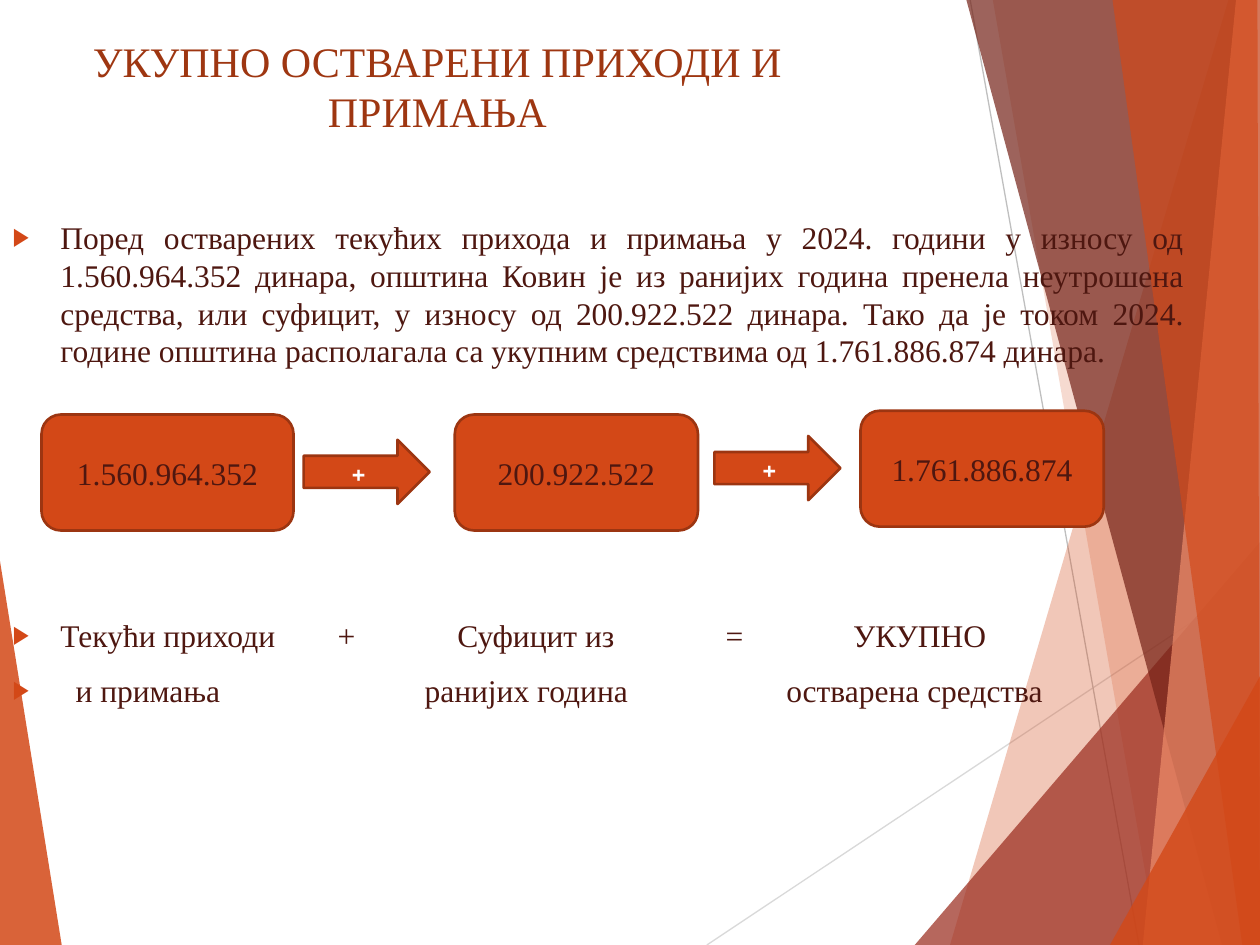
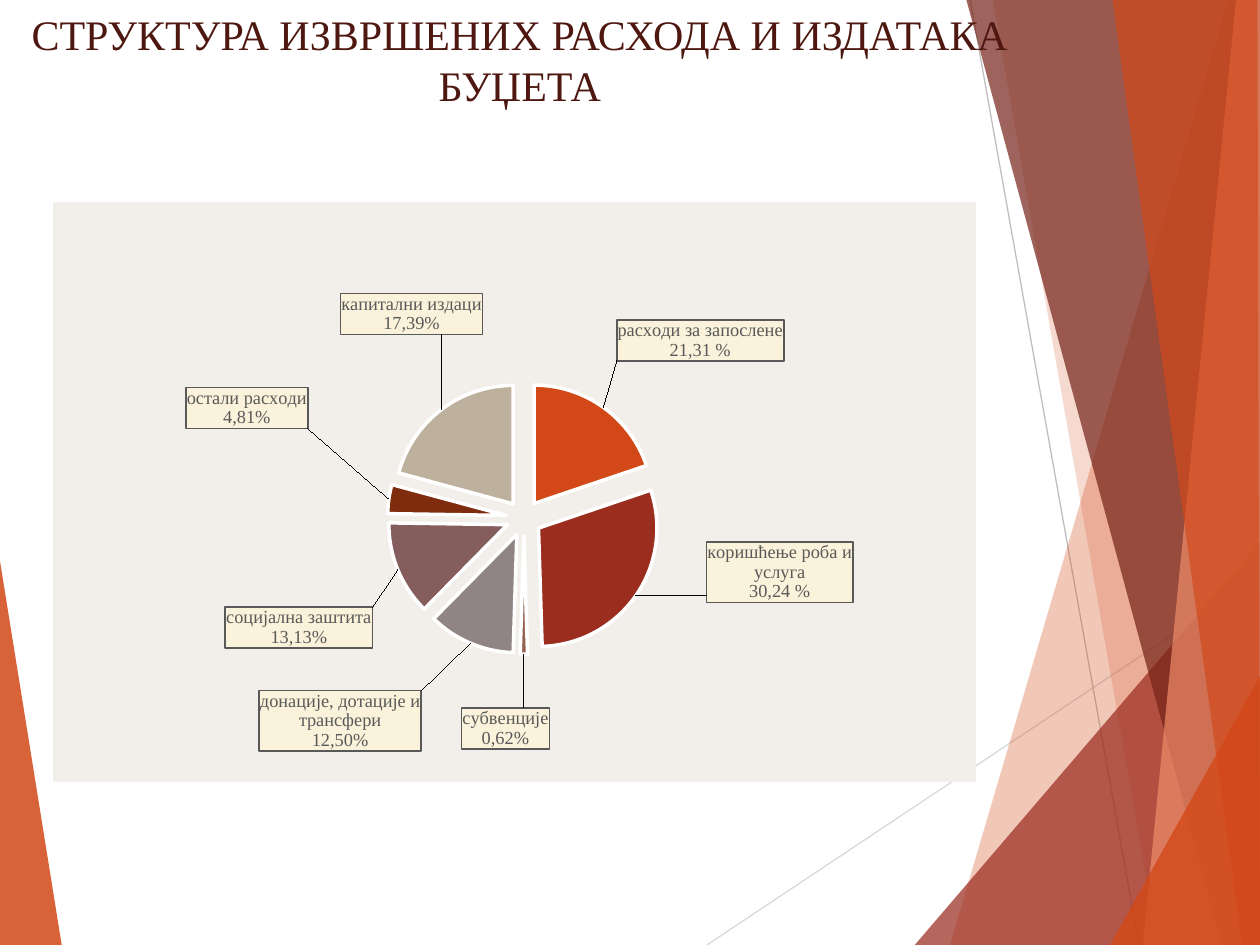
from lxml import etree
from pptx import Presentation
from pptx.chart.data import CategoryChartData
from pptx.dml.color import RGBColor
from pptx.enum.chart import XL_CHART_TYPE, XL_LABEL_POSITION
from pptx.enum.shapes import MSO_CONNECTOR, MSO_SHAPE
from pptx.enum.text import MSO_ANCHOR, MSO_AUTO_SIZE, PP_ALIGN
from pptx.oxml import parse_xml
from pptx.oxml.ns import nsdecls, qn
from pptx.util import Inches, Pt

LINE = MSO_CONNECTOR.STRAIGHT
BOX, ARROW = MSO_SHAPE.ROUNDED_RECTANGLE, MSO_SHAPE.RIGHT_ARROW
PIE, OUTSIDE = XL_CHART_TYPE.PIE, XL_LABEL_POSITION.OUTSIDE_END
TOP, NO_FIT = MSO_ANCHOR.TOP, MSO_AUTO_SIZE.NONE
LEFT, CENTER, JUSTIFY = PP_ALIGN.LEFT, PP_ALIGN.CENTER, PP_ALIGN.JUSTIFY

ORANGE = RGBColor(0xD3, 0x48, 0x17)
RUST = RGBColor(0x9E, 0x36, 0x11)
EDGE = RGBColor(0x9C, 0x35, 0x11)
RED = RGBColor(0x9B, 0x2D, 0x1F)
MAROON = RGBColor(0x74, 0x22, 0x17)
CORAL = RGBColor(0xEF, 0x8C, 0x6A)
DARK = RGBColor(0x4E, 0x17, 0x10)
GREY = RGBColor(0x59, 0x59, 0x59)
SILVER = RGBColor(0xBF, 0xBF, 0xBF)
PALE = RGBColor(0xD9, 0xD9, 0xD9)
CREAM = RGBColor(0xFA, 0xF2, 0xDA)
SAND = RGBColor(0xF2, 0xEF, 0xEA)
TAN = RGBColor(0xBD, 0xB0, 0x9C)
MAUVE = RGBColor(0x91, 0x84, 0x85)
PLUM = RGBColor(0x85, 0x5D, 0x5D)
BROWN = RGBColor(0x7F, 0x2B, 0x0E)
UMBER = RGBColor(0x95, 0x62, 0x51)
WHITE = RGBColor(0xFF, 0xFF, 0xFF)
BLACK = RGBColor(0, 0, 0)
SERIF, SANS = "Times New Roman", "Cabin"


def style(frame, size, color, font=SERIF, align=CENTER):
    """Format every paragraph and run of a text frame."""
    for para in frame.paragraphs:
        para.alignment = align
        for run in para.runs:
            for key, value in {"size": Pt(size), "name": font}.items():
                setattr(run.font, key, value)
            run.font.color.rgb = color


def chart_fill(fill, line, width):
    """Make the fill and border element of a chart part."""
    return parse_xml(
        f'<c:spPr {nsdecls("c", "a")}><a:solidFill><a:srgbClr val="{fill}"/></a:solidFill>'
        f'<a:ln w="{Pt(width)}"><a:solidFill><a:srgbClr val="{line}"/></a:solidFill></a:ln></c:spPr>')


prs = Presentation()
prs.slide_width, prs.slide_height = Inches(10), Inches(7.5)
income = prs.slides.add_slide(prs.slide_layouts[1])
spend = prs.slides.add_slide(prs.slide_layouts[5])

# Decor: drawn once, then moved to the master
decor = []
for x1, y1, x2, y2, color in [(5.61, 7.5, 10.01, 4.57, PALE), (7.7, 0, 9.04, 7.5, SILVER)]:
    line = income.shapes.add_connector(LINE, Inches(x1), Inches(y1), Inches(x2), Inches(y2))
    line.line.color.rgb = color
    line.line.width = Pt(0.75)
    etree.SubElement(line.element.spPr, qn("a:effectLst"))
    decor.append(line)

BANDS = [
    (ORANGE, 85, [(-0.01, 4.39), (0.49, 7.5), (-0.01, 7.5)]),
    (ORANGE, 30, [(9.75, 0), (7.54, 7.5), (10.01, 7.5), (10.01, 0)]),
    (ORANGE, 20, [(7.88, 0), (9.19, 7.5), (10.01, 7.5), (10.01, 0)]),
    (RED, 72, [(7.26, 7.5), (10.01, 4.29), (10.01, 7.5)]),
    (MAROON, 70, [(7.67, 0), (9.7, 7.5), (10.01, 7.5), (10.01, 0)]),
    (CORAL, 70, [(9.81, 0), (9.07, 7.5), (10.01, 7.5), (10.01, 0)]),
    (ORANGE, 65, [(8.83, 0), (9.86, 7.5), (10, 7.5), (9.98, 0)]),
    (ORANGE, 80, [(8.81, 7.5), (10.01, 5.35), (10.01, 7.5)]),
]
for color, alpha, points in BANDS:
    spots = [(Inches(x), Inches(y)) for x, y in points]
    pen = income.shapes.build_freeform(*spots[0])
    pen.add_line_segments(spots[1:], close=True)
    band = pen.convert_to_shape()
    band.shadow.inherit = False
    band.fill.solid()
    band.fill.fore_color.rgb = color
    band.line.fill.background()
    tone = band.element.spPr.find(qn("a:solidFill"))[0]
    etree.SubElement(tone, qn("a:alpha"), val=str(alpha * 1000))
    decor.append(band)

tree = prs.slide_master.element.cSld.spTree
for number, item in enumerate(decor, 100):
    item.element.xpath(".//p:cNvPr")[0].set("id", str(number))
    tree.append(item.element)

# Titles
for slide, text, color, top, width, height in [
    (income, "УКУПНО ОСТВАРЕНИ ПРИХОДИ И ПРИМАЊА", RUST, 0.23, 6.94, 1.44),
    (spend, "СТРУКТУРА ИЗВРШЕНИХ РАСХОДА И ИЗДАТАКА БУЏЕТА", DARK, 0.02, 8.25, 1.59),
]:
    title = slide.shapes.title
    title.left, title.top = Inches(0), Inches(top)
    title.width, title.height = Inches(width), Inches(height)
    frame = title.text_frame
    frame.text = text
    frame.vertical_anchor, frame.auto_size = TOP, NO_FIT
    style(frame, 24, color)

# Slide 1: list
body = income.placeholders[1]
body.left, body.top = Inches(0), Inches(1.68)
body.width, body.height = Inches(9.5), Inches(5.13)
frame = body.text_frame
frame.vertical_anchor, frame.auto_size = TOP, NO_FIT
ROWS = [
    ("Поред остварених текућих прихода и примања у 2024. години у износу од "
     "1.560.964.352 динара, општина Ковин је из ранијих година пренела неутрошена "
     "средства, или суфицит, у износу од 200.922.522 динара. Тако да је током 2024. "
     "године општина располагала са укупним средствима од 1.761.886.874 динара.", 0, []),
    ("\tТекући приходи\t+\tСуфицит из\t=\tУКУПНО", 141, [0.38, 2.58, 3.53, 5.66, 6.67]),
    ("\tи примања\tранијих година\tостварена средства", 10, [0.5, 3.27, 6.14]),
]
frame.text = "\n".join(row[0] for row in ROWS)
style(frame, 18, DARK, align=LEFT)
frame.paragraphs[0].alignment = JUSTIFY
for para, (text, before, stops) in zip(frame.paragraphs, ROWS):
    para.space_before = Pt(before)
    props = para._p.get_or_add_pPr()
    indent = 0 if stops else Inches(0.38)
    props.set("marL", str(indent))
    props.set("indent", str(-indent))
    tint = etree.SubElement(props, qn("a:buClr"))
    etree.SubElement(tint, qn("a:srgbClr"), val=str(ORANGE))
    etree.SubElement(props, qn("a:buSzPct"), val="80000")
    etree.SubElement(props, qn("a:buChar"), char="▶")
    if stops:
        tabs = etree.SubElement(props, qn("a:tabLst"))
        for stop in stops:
            etree.SubElement(tabs, qn("a:tab"), pos=str(Inches(stop)), algn="l")

# Slide 1: sum in boxes and arrows
for kind, text, left, top, width in [
    (BOX, "1.560.964.352", 0.33, 3.29, 2),
    (BOX, "200.922.522", 3.61, 3.29, 1.93),
    (ARROW, "+", 2.41, 3.49, 1),
    (BOX, "1.761.886.874", 6.83, 3.26, 1.93),
    (ARROW, "+", 5.67, 3.46, 1),
]:
    height, color, font = (0.92, DARK, SERIF) if kind == BOX else (0.51, WHITE, SANS)
    shape = income.shapes.add_shape(kind, Inches(left), Inches(top), Inches(width), Inches(height))
    shape.shadow.inherit = False
    shape.fill.solid()
    shape.fill.fore_color.rgb = ORANGE
    shape.line.color.rgb = EDGE
    shape.line.width = Pt(1.5)
    shape.text_frame.text = text
    style(shape.text_frame, 18, color, font)

# Slide 2: pie; name, value, colour, label share, label shift
SLICES = [
    ("расходи за запослене", 20, ORANGE, "21,31 %", 0.01, -0.07),
    ("коришћење роба и услуга", 30, RED, "30,24 %", 0.07, -0.1),
    ("", None, TAN, "", 0, 0),
    ("субвенције", 1, UMBER, "0,62%", -0.02, 0.08),
    ("донације, дотације и трансфери", 12, MAUVE, "12,50%", -0.05, 0.07),
    ("социјална заштита", 13, PLUM, "13,13%", -0.02, 0.06),
    ("остали расходи", 4, BROWN, "4,81%", -0.08, -0.12),
    ("", None, MAROON, "", 0, 0),
    ("капитални издаци", 21, TAN, "17,39%", 0.05, -0.12),
]
data = CategoryChartData(number_format="#,##0")
data.categories = [part[0] for part in SLICES]
data.add_series("Series 1", [part[1] for part in SLICES])
chart = spend.shapes.add_chart(
    PIE, Inches(0.42), Inches(1.6), Inches(7.33), Inches(4.61), data).chart
chart.has_legend = chart.has_title = False
chart.font.size, chart.font.name = Pt(10), SANS
chart.font.color.rgb = BLACK
plot = chart.plots[0]
plot.vary_by_categories = True
series = plot.series[0]
series.data_labels.show_value = False

for index, (name, value, color, share, dx, dy) in enumerate(SLICES):
    if value is None:
        continue
    point = series.points[index]
    point.format.fill.solid()
    point.format.fill.fore_color.rgb = color
    point.format.line.color.rgb = WHITE
    point.format.line.width = Pt(2)
    label = point.data_label
    label.text_frame.text = f"{name}\n{share}"
    style(label.text_frame, 10.5, GREY)
    label.position = OUTSIDE
    node = series._element.xpath(f'c:dLbls/c:dLbl[c:idx/@val="{index}"]')[0]
    node.find(qn("c:tx")).addnext(chart_fill(CREAM, GREY, 1))
    for old in node.findall(qn("c:layout")):
        node.remove(old)
    node.find(qn("c:idx")).addnext(parse_xml(
        f'<c:layout {nsdecls("c")}><c:manualLayout><c:x val="{dx}"/><c:y val="{dy}"/>'
        '</c:manualLayout></c:layout>'))

burst = etree.Element(qn("c:explosion"), val="15")
series._element.find(qn("c:dPt")).addprevious(burst)
root = chart._chartSpace.find(qn("c:chart"))
root.addnext(chart_fill(SAND, SAND, 0.75))
area = root.find(qn("c:plotArea"))
for old in area.findall(qn("c:layout")):
    area.remove(old)
area.insert(0, parse_xml(
    f'<c:layout {nsdecls("c")}><c:manualLayout><c:layoutTarget val="inner"/>'
    '<c:xMode val="edge"/><c:yMode val="edge"/><c:x val="0.24"/><c:y val="0.31"/>'
    '<c:w val="0.54"/><c:h val="0.47"/></c:manualLayout></c:layout>'))

prs.save("out.pptx")
